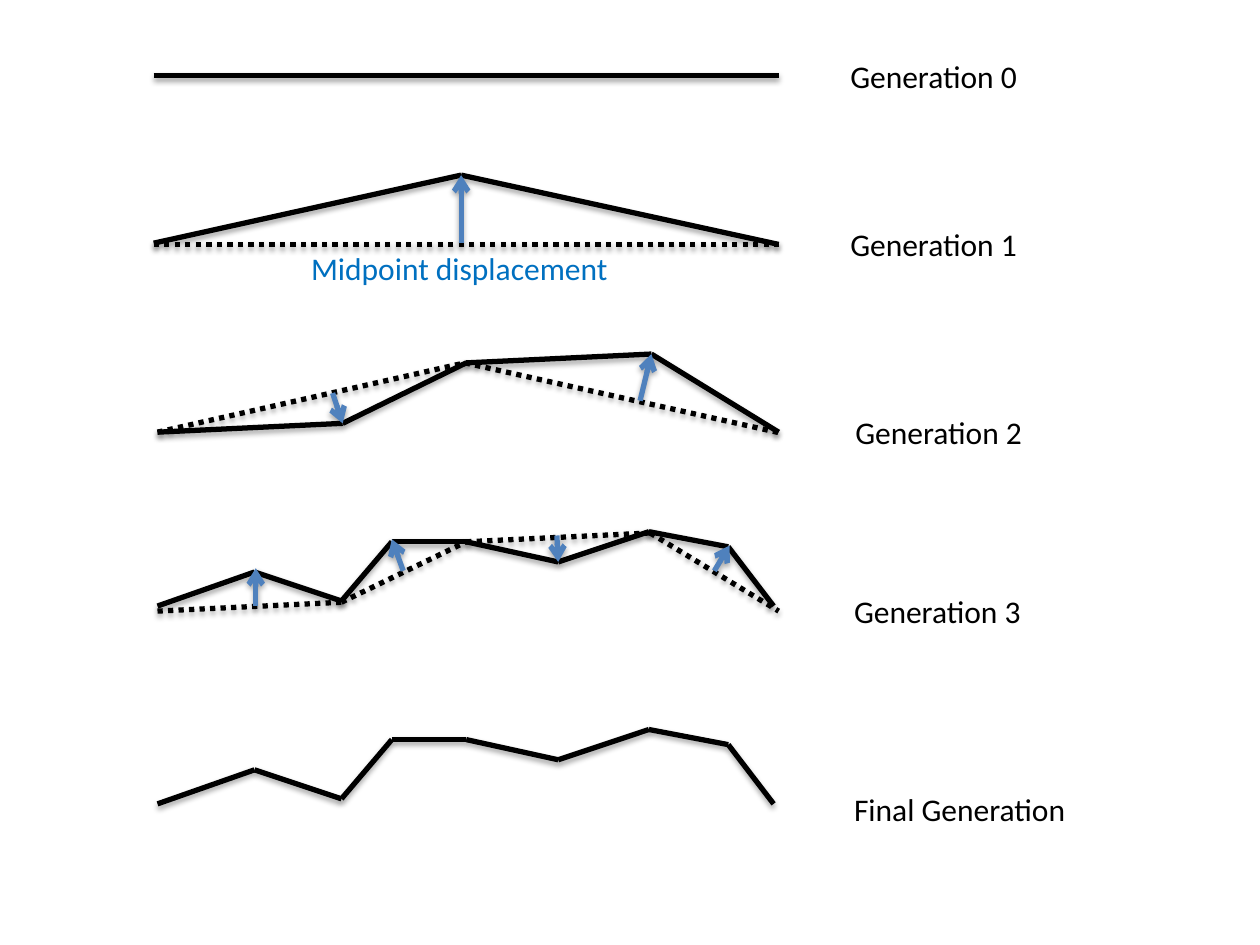
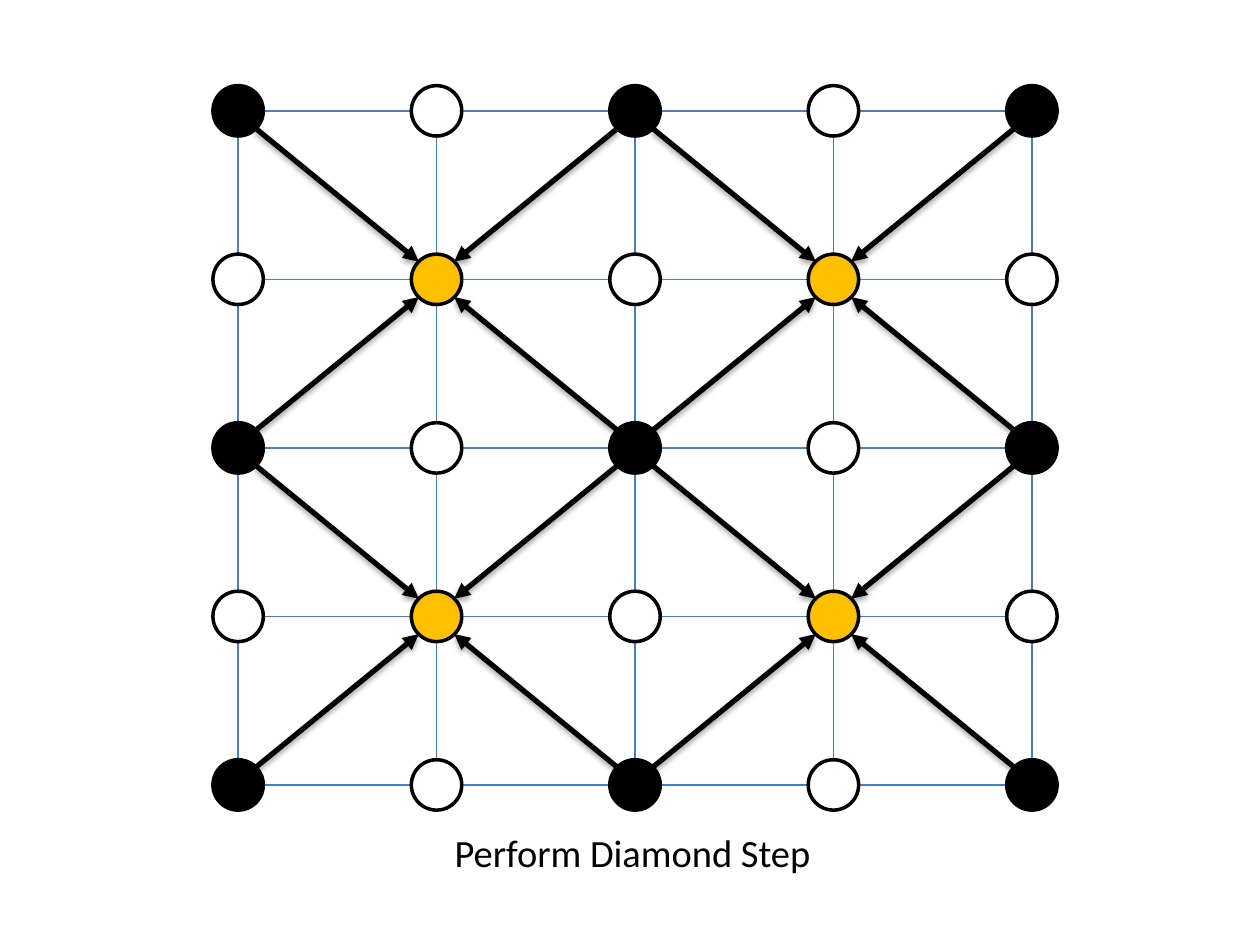
from itertools import pairwise, product

from lxml.etree import SubElement
from pptx import Presentation
from pptx.dml.color import RGBColor
from pptx.enum.shapes import MSO_CONNECTOR, MSO_SHAPE
from pptx.enum.text import MSO_AUTO_SIZE
from pptx.oxml.ns import qn
from pptx.util import Inches, Pt

BLACK = RGBColor(0x00, 0x00, 0x00)
WHITE = RGBColor(0xFF, 0xFF, 0xFF)
AMBER = RGBColor(0xFF, 0xC0, 0x00)
ARROW_BLUE = RGBColor(0x4F, 0x81, 0xBD)
GRID_BLUE = RGBColor(0x4B, 0x7E, 0xBC)
TEXT_BLUE = RGBColor(0x00, 0x70, 0xC0)


class Canvas:
    """Holds the shared style and the slide being drawn."""

    font = "Calibri"
    stroke = 3

    def __init__(self, prs):
        self.prs = prs
        self.slide = None

    def new_slide(self):
        self.slide = self.prs.slides.add_slide(self.prs.slide_layouts[6])

    def line(self, start, end, color=BLACK, width=stroke, dash=None, head=None, shadow=True):
        points = [Inches(v) for v in (*start, *end)]
        cx = self.slide.shapes.add_connector(MSO_CONNECTOR.STRAIGHT, *points)
        cx.line.color.rgb = color
        cx.line.width = Pt(width)
        ln = cx.line._get_or_add_ln()
        if dash:
            SubElement(ln, qn("a:prstDash"), val=dash)
        if head:
            SubElement(ln, qn("a:tailEnd"), type=head)
        effects = SubElement(cx._element.spPr, qn("a:effectLst"))
        if shadow:
            outer = SubElement(effects, qn("a:outerShdw"), blurRad="40000", dist="23000",
                               dir="5400000", rotWithShape="0")
            clr = SubElement(outer, qn("a:srgbClr"), val="000000")
            SubElement(clr, qn("a:alpha"), val="35000")

    def polyline(self, points, dash=None):
        for start, end in pairwise(points):
            self.line(start, end, dash=dash)

    def circle(self, x, y, radius, fill):
        sp = self.slide.shapes.add_shape(MSO_SHAPE.OVAL, Inches(x - radius), Inches(y - radius),
                                         Inches(2 * radius), Inches(2 * radius))
        sp.shadow.inherit = False
        sp.fill.solid()
        sp.fill.fore_color.rgb = fill
        sp.line.color.rgb = BLACK
        sp.line.width = Pt(2)

    def text(self, x, y, w, h, words, size=18, color=BLACK):
        tb = self.slide.shapes.add_textbox(Inches(x), Inches(y), Inches(w), Inches(h))
        tf = tb.text_frame
        tf.word_wrap = False
        tf.auto_size = MSO_AUTO_SIZE.SHAPE_TO_FIT_TEXT
        r = tf.paragraphs[0].add_run()
        r.text = words
        r.font.name = self.font
        r.font.size = Pt(size)
        r.font.color.rgb = color


# Each generation: label, label place and width, previous outlines, new outline, displacements
RIDGE = [(1.25, 4.81), (2.02, 4.54), (2.71, 4.77), (3.11, 4.3), (3.7, 4.3),
         (4.43, 4.46), (5.15, 4.22), (5.78, 4.34), (6.14, 4.81)]
FINAL_DROP = 1.57
GENERATIONS = [
    ("Generation 0", (6.65, 0.4, 1.54), [], [(1.22, 0.6), (6.18, 0.6)], []),
    ("Generation 1", (6.65, 1.74, 1.54),
     [(1.22, 1.94), (6.18, 1.94)],
     [(1.22, 1.93), (3.66, 1.39), (6.18, 1.94)],
     [((3.66, 1.93), (3.66, 1.39))]),
    ("Generation 2", (6.69, 3.23, 1.54),
     [(1.25, 3.43), (3.69, 2.88), (6.21, 3.44)],
     [(1.25, 3.43), (2.72, 3.36), (3.7, 2.88), (5.17, 2.81), (6.18, 3.43)],
     [((2.64, 3.12), (2.72, 3.36)), ((5.08, 3.18), (5.17, 2.81))]),
    ("Generation 3", (6.68, 4.65, 1.54),
     [(1.25, 4.85), (2.71, 4.78), (3.7, 4.3), (5.16, 4.23), (6.18, 4.85)],
     RIDGE,
     [((5.67, 4.53), (5.79, 4.33)), ((4.42, 4.25), (4.43, 4.46)),
      ((3.2, 4.53), (3.11, 4.28)), ((2.03, 4.81), (2.03, 4.51))]),
    ("Final Generation", (6.68, 6.22, 1.9), [],
     [(x, y + FINAL_DROP) for x, y in RIDGE], []),
]


def midpoint_slide(canvas):
    canvas.new_slide()
    for label, place, previous, outline, displacements in GENERATIONS:
        canvas.text(*place, 0.4, label)
        canvas.polyline(previous, dash="sysDot")
        canvas.polyline(outline)
        for start, end in displacements:
            canvas.line(start, end, ARROW_BLUE, head="arrow")
    canvas.text(2.37, 1.93, 2.58, 0.4, "Midpoint displacement", color=TEXT_BLUE)


def diamond_slide(canvas):
    canvas.new_slide()
    left, top, right, bottom = 1.89, 0.88, 8.19, 6.23
    count, radius = 5, 0.2
    xs = [left + i * (right - left) / (count - 1) for i in range(count)]
    ys = [top + i * (bottom - top) / (count - 1) for i in range(count)]

    # Grid lines
    for x in xs:
        canvas.line((x, top - radius), (x, bottom + radius), GRID_BLUE, 0.75, shadow=False)
    for y in ys:
        canvas.line((left - radius, y), (right + radius, y), GRID_BLUE, 0.75, shadow=False)

    # Nodes: known corners black, new centres amber, the rest white
    fills = {(0, 0): BLACK, (1, 1): AMBER}
    for row, col in product(range(count), repeat=2):
        canvas.circle(xs[col], ys[row], radius, fills.get((row % 2, col % 2), WHITE))

    canvas.text(3.51, 6.53, 3.07, 0.47, "Perform Diamond Step", size=22)

    # Arrows from the four corners of each square to its centre, rim to rim
    rim = 0.14
    for row, col in product(range(1, count, 2), repeat=2):
        for dx, dy in product((-1, 1), repeat=2):
            start = (xs[col + dx] - dx * rim, ys[row + dy] - dy * rim)
            end = (xs[col] + dx * rim, ys[row] + dy * rim)
            canvas.line(start, end, head="triangle")


def main():
    prs = Presentation()
    prs.slide_width, prs.slide_height = Inches(10), Inches(7.5)
    canvas = Canvas(prs)
    midpoint_slide(canvas)
    diamond_slide(canvas)
    prs.save("out.pptx")


if __name__ == "__main__":
    main()
